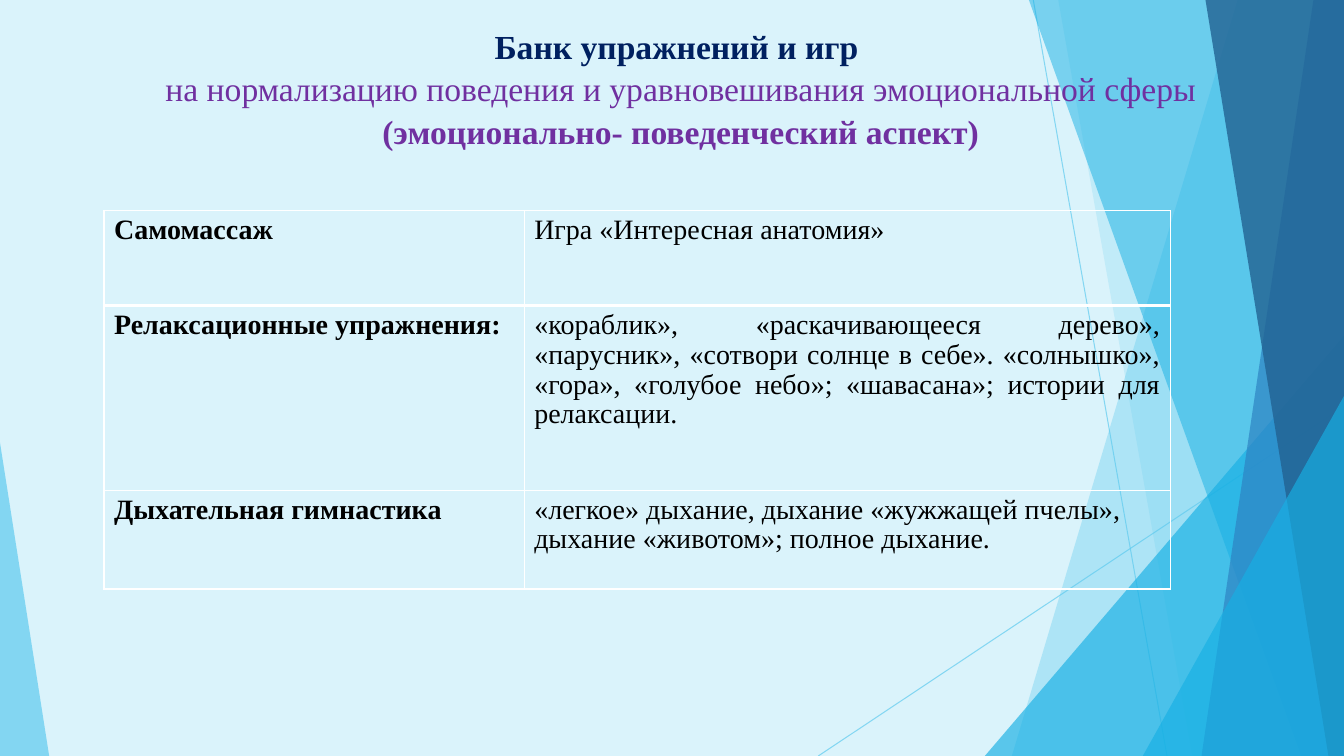
import pptx
import pptx.dml.color
import pptx.enum.shapes
import pptx.enum.text
import pptx.oxml
import pptx.oxml.ns
import pptx.util
from lxml import etree

Cm = pptx.util.Cm
Pt = pptx.util.Pt
RGBColor = pptx.dml.color.RGBColor
PP_ALIGN = pptx.enum.text.PP_ALIGN
qn = pptx.oxml.ns.qn

WIDTH, HEIGHT = 33.87, 19.05
FONT = "Times New Roman"

BACKGROUND = RGBColor(0xDA, 0xF3, 0xFB)
SKY = RGBColor(0x5F, 0xCB, 0xEF)
AZURE = RGBColor(0x17, 0xB0, 0xE4)
BLUE = RGBColor(0x2E, 0x83, 0xC3)
STEEL = RGBColor(0x22, 0x62, 0x92)
NAVY = RGBColor(0x00, 0x20, 0x60)
PURPLE = RGBColor(0x70, 0x30, 0xA0)
BLACK = RGBColor(0x00, 0x00, 0x00)
WHITE = RGBColor(0xFF, 0xFF, 0xFF)


class SlideBuilder:
    """Holds the slide and the style shared by its elements."""

    def __init__(self, presentation):
        self.slide = presentation.slides.add_slide(presentation.slide_layouts[5])
        self.shapes = self.slide.shapes
        fill = self.slide.background.fill
        fill.solid()
        fill.fore_color.rgb = BACKGROUND

    def set_opacity(self, shape, percent):
        for color in shape.element.iter(qn("a:srgbClr")):
            etree.SubElement(color, qn("a:alpha"), val=str(percent * 1000))

    def paint(self, shape, color, opacity):
        shape.shadow.inherit = False
        shape.line.fill.background()
        shape.fill.solid()
        shape.fill.fore_color.rgb = color
        self.set_opacity(shape, opacity)

    def line(self, start, end):
        connector = self.shapes.add_connector(
            pptx.enum.shapes.MSO_CONNECTOR.STRAIGHT,
            *(Cm(value) for value in start + end))
        connector.line.color.rgb = SKY
        connector.line.width = Pt(0.75)
        self.set_opacity(connector, 70)
        etree.SubElement(connector.element.spPr, qn("a:effectLst"))

    def right_panel(self, top_x, bottom_x, color, opacity):
        """Full-height panel with a slanted left side and a straight right side."""
        builder = self.shapes.build_freeform(Cm(top_x), 0)
        corners = [(WIDTH, 0), (WIDTH, HEIGHT), (bottom_x, HEIGHT)]
        builder.add_line_segments([(Cm(x), Cm(y)) for x, y in corners])
        self.paint(builder.convert_to_shape(), color, opacity)

    def corner_triangle(self, left, top, width, apex, color, opacity):
        """Triangle standing on the bottom edge of the slide."""
        shape = self.shapes.add_shape(
            pptx.enum.shapes.MSO_SHAPE.ISOSCELES_TRIANGLE,
            Cm(left), Cm(top), Cm(width), Cm(HEIGHT - top))
        shape.adjustments[0] = apex
        self.paint(shape, color, opacity)

    def set_text(self, paragraph, text, size, color, bold, alignment, spacing):
        paragraph.text = text
        paragraph.alignment = alignment
        paragraph.line_spacing = spacing
        paragraph.font.name = FONT
        paragraph.font.size = Pt(size)
        paragraph.font.bold = bold
        paragraph.font.color.rgb = color

    def title(self, left, top, width, height, lines):
        title = self.shapes.title
        title.left, title.top = Cm(left), Cm(top)
        title.width, title.height = Cm(width), Cm(height)
        # Bring the title in front of the decoration
        title.element.getparent().append(title.element)
        frame = title.text_frame
        frame.word_wrap = True
        frame.auto_size = pptx.enum.text.MSO_AUTO_SIZE.NONE
        frame.vertical_anchor = pptx.enum.text.MSO_ANCHOR.TOP
        for index, (text, color, bold) in enumerate(lines):
            paragraph = frame.add_paragraph() if index else frame.paragraphs[0]
            self.set_text(paragraph, text, 24, color, bold, PP_ALIGN.CENTER, 1.05)

    def cell_borders(self, cell, widths):
        properties = cell._tc.get_or_add_tcPr()
        for side, width in widths.items():
            border = etree.SubElement(properties, qn("a:ln" + side), w=str(Pt(width)))
            fill = etree.SubElement(border, qn("a:solidFill"))
            etree.SubElement(fill, qn("a:srgbClr"), val=str(WHITE))

    def table(self, left, top, column_widths, row_heights, rows):
        table = self.shapes.add_table(
            len(rows), len(column_widths), Cm(left), Cm(top),
            Cm(sum(column_widths)), Cm(sum(row_heights))).table
        table.first_row = table.horz_banding = False
        for column, width in zip(table.columns, column_widths):
            column.width = Cm(width)
        for row, height in zip(table.rows, row_heights):
            row.height = Cm(height)
        for i, (heading, content, alignment) in enumerate(rows):
            for j, text in enumerate((heading, content)):
                cell = table.cell(i, j)
                self.set_text(cell.text_frame.paragraphs[0], text, 20, BLACK,
                              j == 0, alignment if j else PP_ALIGN.LEFT, 0.96)
                # Thick rule between the first and second rows
                self.cell_borders(cell, {"L": 1, "R": 1, "T": 3 if i == 1 else 1,
                                         "B": 3 if i == 0 else 1})
                cell.fill.background()


def main():
    presentation = pptx.Presentation()
    presentation.slide_width = Cm(WIDTH)
    presentation.slide_height = Cm(HEIGHT)
    builder = SlideBuilder(presentation)

    # Decoration
    builder.line((26.04, 0), (29.41, HEIGHT))
    builder.line((WIDTH, 10.24), (20.62, HEIGHT))
    builder.right_panel(31.19, 25.5, SKY, 36)
    builder.right_panel(26.67, 30.05, SKY, 20)
    builder.corner_triangle(24.82, 8.46, 9.05, 1, AZURE, 66)
    builder.right_panel(25.93, 32.79, AZURE, 50)
    builder.right_panel(33.1, 30.28, BLUE, 70)
    builder.right_panel(30.38, 33.48, STEEL, 80)
    builder.corner_triangle(28.8, 9.98, 5.07, 1, AZURE, 66)
    builder.corner_triangle(0, 11.15, 1.24, 0, SKY, 70)

    # Title
    builder.title(3.86, 0.48, 26.59, 3.33, [
        ("Банк упражнений и игр ", NAVY, True),
        ("на нормализацию поведения и уравновешивания эмоциональной сферы ",
         PURPLE, False),
        ("(эмоционально- поведенческий аспект)", PURPLE, True),
    ])

    # Table of exercises
    builder.table(2.62, 5.31, [10.59, 16.28], [2.39, 4.65, 2.49], [
        ("Самомассаж", "Игра «Интересная анатомия»", PP_ALIGN.LEFT),
        ("Релаксационные упражнения:",
         "«кораблик», «раскачивающееся дерево», «парусник», «сотвори солнце "
         "в себе». «солнышко», «гора», «голубое небо»; «шавасана»; истории "
         "для релаксации.", PP_ALIGN.JUSTIFY),
        ("Дыхательная гимнастика",
         "«легкое» дыхание, дыхание «жужжащей пчелы», дыхание «животом»; "
         "полное дыхание.", PP_ALIGN.LEFT),
    ])

    presentation.save("out.pptx")


if __name__ == "__main__":
    main()
